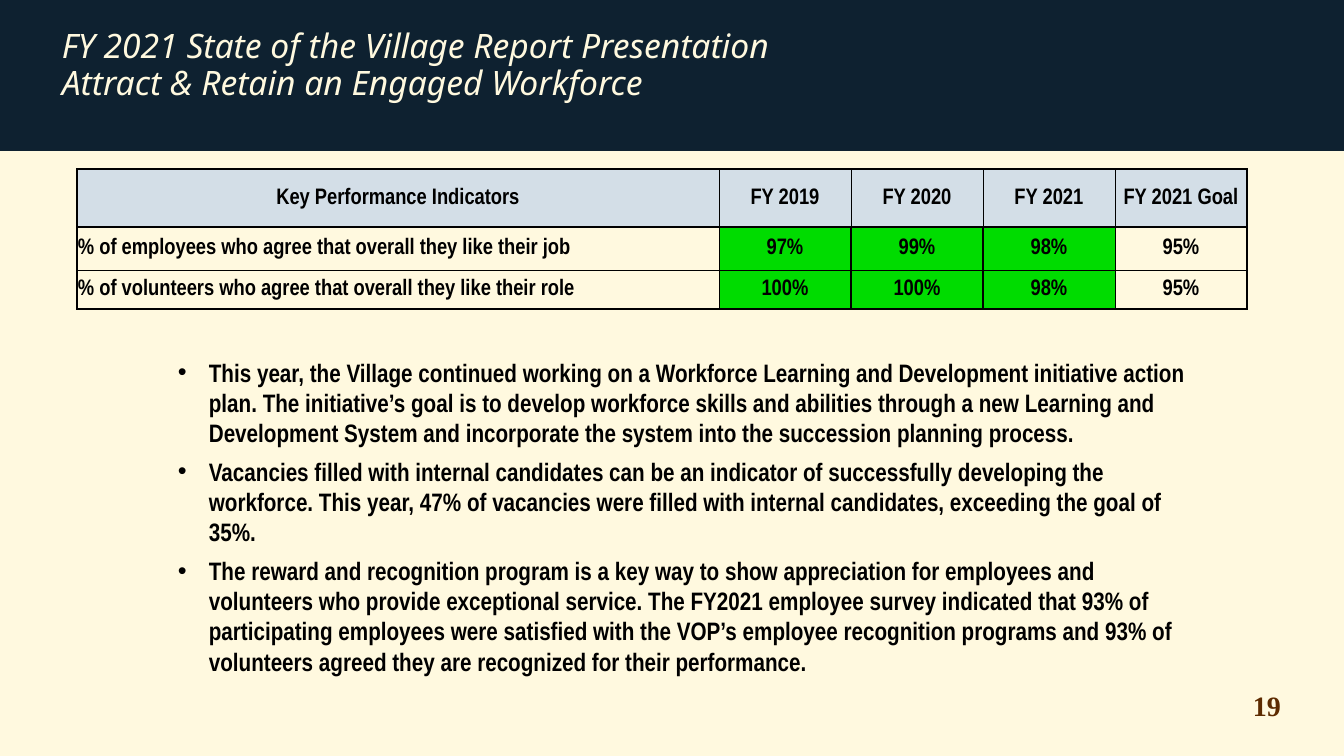
from dataclasses import dataclass

import pptx
import pptx.dml.color
import pptx.enum.shapes
import pptx.enum.text
import pptx.oxml.ns
import pptx.slide
import pptx.table
import pptx.text.text
import pptx.util
from lxml import etree

COLORS = {
    "cream": "FFF9DF",
    "navy": "0E2130",
    "brown": "5D2B00",
    "black": "000000",
    "header": "D3DEE7",
    "green": "00DC00",
}
EMU_PER_PX = 914400 / 100.8

KPI_ROWS = [
    ["Key Performance Indicators", "FY 2019", "FY 2020", "FY 2021", "FY 2021 Goal"],
    ["% of employees who agree that overall they like their job", "97%", "99%", "98%", "95%"],
    ["% of volunteers who agree that overall they like their role", "100%", "100%", "98%", "95%"],
]
COL_WIDTHS = [642, 132, 132, 132, 132]
ROW_HEIGHTS = [58, 43, 39]
# Border widths in points, from left to right and from top to bottom
HEADER_VERTICALS = [1.5, 0.5, 0.5, 0.5, 0.5, 1]
BODY_VERTICALS = [1.5, 0.5, 1.5, 1.5, 0.5, 1.5]
HORIZONTALS = [1, 1.5, 0.5, 1.5]


@dataclass
class Style:
    font: str
    size: int
    color: str
    bold: bool = False
    italic: bool = False


@dataclass
class TextBlock:
    left: int
    top: int
    width: int
    height: int
    paragraphs: list[str]
    style: Style
    line_spacing: float = 1.0
    space_after: int = 0
    bulleted: bool = False


NARROW_16 = Style("Arial Narrow", 16, "black", bold=True)

TEXT_BLOCKS = [
    TextBlock(1243, 684, 70, 44, ["19"], Style("Times New Roman", 20, "brown", bold=True)),
    TextBlock(
        52, 25, 918, 92,
        ["FY 2021 State of the Village Report Presentation",
         "Attract & Retain an Engaged Workforce"],
        Style("Noto Sans", 24, "cream", italic=True),
        line_spacing=0.9,
    ),
    TextBlock(
        168, 352, 1031, 333,
        ["This year, the Village continued working on a Workforce Learning and Development "
         "initiative action plan. The initiative’s goal is to develop workforce skills and "
         "abilities through a new Learning and Development System and incorporate the system "
         "into the succession planning process.",
         "Vacancies filled with internal candidates can be an indicator of successfully "
         "developing the workforce. This year, 47% of vacancies were filled with internal "
         "candidates, exceeding the goal of 35%.",
         "The reward and recognition program is a key way to show appreciation for employees "
         "and volunteers who provide exceptional service. The FY2021 employee survey indicated "
         "that 93% of participating employees were satisfied with the VOP’s employee recognition "
         "programs and 93% of volunteers agreed they are recognized for their performance."],
        Style("Arial Narrow", 18, "black", bold=True),
        space_after=6,
        bulleted=True,
    ),
]


def px(length: int) -> pptx.util.Emu:
    return pptx.util.Emu(round(length * EMU_PER_PX))


def rgb(name: str) -> pptx.dml.color.RGBColor:
    return pptx.dml.color.RGBColor.from_string(COLORS[name])


def format_runs(p: pptx.text.text._Paragraph, style: Style) -> None:
    for r in p.runs:
        r.font.name = style.font
        r.font.size = pptx.util.Pt(style.size)
        r.font.bold = style.bold
        r.font.italic = style.italic
        r.font.color.rgb = rgb(style.color)


def add_bullet(p: pptx.text.text._Paragraph) -> None:
    pPr = p._p.get_or_add_pPr()
    pPr.set("marL", str(px(31)))
    pPr.set("indent", str(-px(31)))
    etree.SubElement(pPr, pptx.oxml.ns.qn("a:buFont"), typeface="Arial")
    etree.SubElement(pPr, pptx.oxml.ns.qn("a:buChar"), char="•")


def add_text(slide: pptx.slide.Slide, block: TextBlock) -> None:
    sp = slide.shapes.add_textbox(
        px(block.left), px(block.top), px(block.width), px(block.height))
    tf = sp.text_frame
    tf.word_wrap = True
    tf.auto_size = pptx.enum.text.MSO_AUTO_SIZE.SHAPE_TO_FIT_TEXT
    tf.text = "\n".join(block.paragraphs)
    for p in tf.paragraphs:
        p.line_spacing = block.line_spacing
        p.space_after = pptx.util.Pt(block.space_after)
        if block.bulleted:
            add_bullet(p)
        format_runs(p, block.style)


def set_borders(cell: pptx.table._Cell, row: int, col: int) -> None:
    verticals = BODY_VERTICALS if row else HEADER_VERTICALS
    top = 1.5 if row == col == 0 else HORIZONTALS[row]
    widths = {"L": verticals[col], "R": verticals[col + 1],
              "T": top, "B": HORIZONTALS[row + 1]}
    tcPr = cell._tc.get_or_add_tcPr()
    for side, width in widths.items():
        ln = etree.SubElement(tcPr, pptx.oxml.ns.qn(f"a:ln{side}"),
                              w=str(pptx.util.Pt(width)))
        fill = etree.SubElement(ln, pptx.oxml.ns.qn("a:solidFill"))
        etree.SubElement(fill, pptx.oxml.ns.qn("a:srgbClr"), val=COLORS["black"])


def fill_cell(cell: pptx.table._Cell, row: int, col: int) -> None:
    set_borders(cell, row, col)
    if row == 0 or 1 <= col <= 3:
        cell.fill.solid()
        cell.fill.fore_color.rgb = rgb("green" if row else "header")
    else:
        cell.fill.background()
    cell.margin_left = cell.margin_right = cell.margin_top = px(1)
    cell.margin_bottom = 0
    cell.vertical_anchor = pptx.enum.text.MSO_ANCHOR.MIDDLE
    p = cell.text_frame.paragraphs[0]
    p.text = KPI_ROWS[row][col]
    align = pptx.enum.text.PP_ALIGN
    p.alignment = align.LEFT if row and col == 0 else align.CENTER
    format_runs(p, NARROW_16)


def add_kpi_table(slide: pptx.slide.Slide) -> None:
    table = slide.shapes.add_table(
        len(ROW_HEIGHTS), len(COL_WIDTHS), px(77), px(169),
        px(sum(COL_WIDTHS)), px(sum(ROW_HEIGHTS))).table
    table.first_row = table.horz_banding = False
    for column, width in zip(table.columns, COL_WIDTHS):
        column.width = px(width)
    for i, height in enumerate(ROW_HEIGHTS):
        table.rows[i].height = px(height)
        for j in range(len(COL_WIDTHS)):
            fill_cell(table.cell(i, j), i, j)


def add_title_band(slide: pptx.slide.Slide) -> None:
    sp = slide.shapes.add_shape(
        pptx.enum.shapes.MSO_SHAPE.RECTANGLE, 0, 0, px(1344), px(151))
    sp.shadow.inherit = False
    sp.fill.solid()
    sp.fill.fore_color.rgb = rgb("navy")
    sp.line.fill.background()


def main() -> None:
    prs = pptx.Presentation()
    prs.slide_width, prs.slide_height = px(1344), px(756)
    slide = prs.slides.add_slide(prs.slide_layouts[6])
    slide.background.fill.solid()
    slide.background.fill.fore_color.rgb = rgb("cream")
    add_title_band(slide)
    for block in TEXT_BLOCKS:
        add_text(slide, block)
    add_kpi_table(slide)
    prs.save("out.pptx")


if __name__ == "__main__":
    main()
